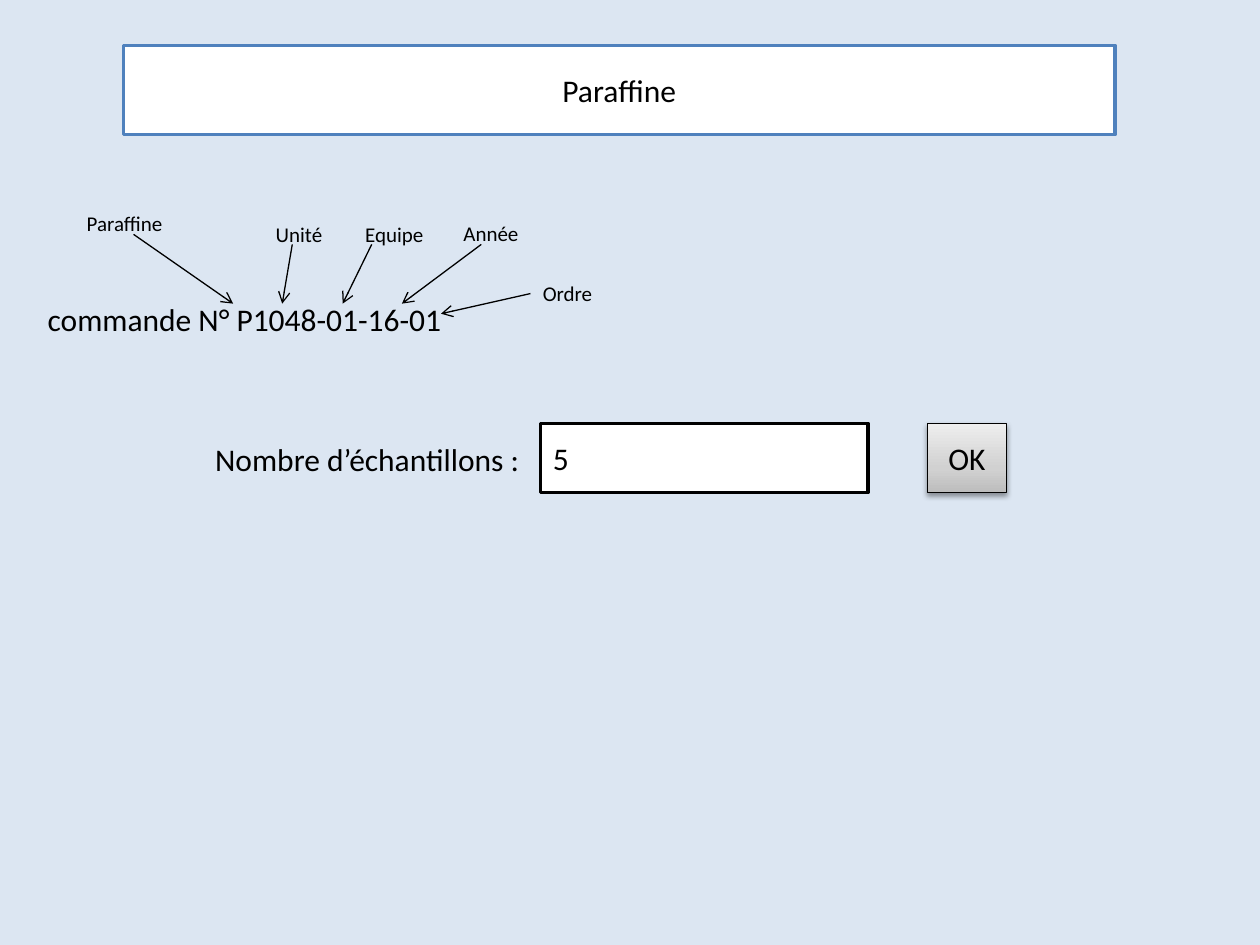
from lxml import etree
from pptx import Presentation
from pptx.dml.color import RGBColor
from pptx.enum.shapes import MSO_CONNECTOR, MSO_SHAPE
from pptx.enum.text import MSO_ANCHOR, PP_ALIGN
from pptx.oxml import parse_xml
from pptx.oxml.ns import nsdecls, qn
from pptx.util import Inches, Pt

RECT, STRAIGHT = MSO_SHAPE.RECTANGLE, MSO_CONNECTOR.STRAIGHT
MIDDLE, TOP = MSO_ANCHOR.MIDDLE, MSO_ANCHOR.TOP
LEFT, CENTER = PP_ALIGN.LEFT, PP_ALIGN.CENTER

COLORS = {"background": "DCE6F2", "field": "FFFFFF", "title_line": "4F81BD", "ink": "000000"}
FONT = "Calibri"

# Content: (text, left, top, width, height)
TITLE = ("Paraffine", 0.98, 0.36, 7.87, 0.71)
SAMPLE_COUNT = ("5", 4.29, 3.36, 2.6, 0.55)
OK_BUTTON = ("OK", 7.36, 3.36, 0.63, 0.55)
CAPTIONS = [
    ("Nombre d’échantillons :", 1.61, 3.44, 2.83, 0.4),
    ("commande N° P1048-01-16-01", 0.28, 2.33, 3.94, 0.4),
]
# Parts of the order number: (label, label left and top, arrow start, arrow end)
ORDER_PARTS = [
    ("Paraffine", (0.59, 1.62), (1.06, 1.86), (1.85, 2.41)),
    ("Unité", (2.09, 1.71), (2.32, 1.94), (2.24, 2.41)),
    ("Equipe", (2.8, 1.71), (2.95, 1.94), (2.72, 2.41)),
    ("Année", (3.58, 1.7), (3.82, 1.94), (3.19, 2.41)),
    ("Ordre", (4.21, 2.18), (4.21, 2.33), (3.5, 2.49)),
]
LABEL_SIZE = (0.94, 0.3)
BUTTON_STOPS = [(0, "BDBDBD"), (35, "D1D1D1"), (100, "EEEEEE")]


def rgb(name):
    return RGBColor.from_string(COLORS[name])


def write(shape, text, size=18, align=LEFT, anchor=TOP):
    frame = shape.text_frame
    frame.word_wrap = True
    frame.vertical_anchor = anchor
    paragraph = frame.paragraphs[0]
    paragraph.alignment = align
    run = paragraph.add_run()
    run.text = text
    run.font.name = FONT
    run.font.size = Pt(size)
    run.font.color.rgb = rgb("ink")


def add_caption(slide, text, *box, size=18):
    write(slide.shapes.add_textbox(*map(Inches, box)), text, size=size)


def add_box(slide, text, *box, line="ink", weight=2, align=LEFT):
    shape = slide.shapes.add_shape(RECT, *map(Inches, box))
    shape.shadow.inherit = False
    shape.fill.solid()
    shape.fill.fore_color.rgb = rgb("field")
    shape.line.color.rgb = rgb(line)
    shape.line.width = Pt(weight)
    write(shape, text, align=align, anchor=MIDDLE)
    return shape


def raise_button(button):
    """Give the button its three-stop gradient and soft shadow."""
    properties = button._element.spPr
    stops = "".join(
        f'<a:gs pos="{position * 1000}"><a:srgbClr val="{color}"/></a:gs>'
        for position, color in BUTTON_STOPS
    )
    gradient = parse_xml(
        f'<a:gradFill {nsdecls("a")} rotWithShape="1"><a:gsLst>{stops}</a:gsLst>'
        '<a:lin ang="16200000" scaled="0"/></a:gradFill>'
    )
    properties.replace(properties.find(qn("a:solidFill")), gradient)
    properties.find(qn("a:effectLst")).append(parse_xml(
        f'<a:outerShdw {nsdecls("a")} blurRad="{Pt(3.1)}" dist="{Pt(1.6)}" dir="5400000" '
        f'rotWithShape="0"><a:srgbClr val="{COLORS["ink"]}"><a:alpha val="38000"/>'
        '</a:srgbClr></a:outerShdw>'
    ))


def add_arrow(slide, start, end):
    arrow = slide.shapes.add_connector(STRAIGHT, *map(Inches, start + end))
    arrow.line.color.rgb = rgb("ink")
    arrow.line.width = Pt(0.75)
    etree.SubElement(arrow.line._get_or_add_ln(), qn("a:tailEnd"), type="arrow")
    etree.SubElement(arrow._element.spPr, qn("a:effectLst"))


def main():
    deck = Presentation()
    deck.slide_width, deck.slide_height = Inches(10), Inches(7.5)
    slide = deck.slides.add_slide(deck.slide_layouts[6])
    slide.background.fill.solid()
    slide.background.fill.fore_color.rgb = rgb("background")

    # Title and sample form
    add_box(slide, *TITLE, line="title_line", align=CENTER)
    add_box(slide, *SAMPLE_COUNT)
    raise_button(add_box(slide, *OK_BUTTON, weight=0.75, align=CENTER))
    for caption in CAPTIONS:
        add_caption(slide, *caption)

    # Explained order number
    for label, corner, start, end in ORDER_PARTS:
        add_arrow(slide, start, end)
        add_caption(slide, label, *corner, *LABEL_SIZE, size=12)

    deck.save("out.pptx")


if __name__ == "__main__":
    main()
